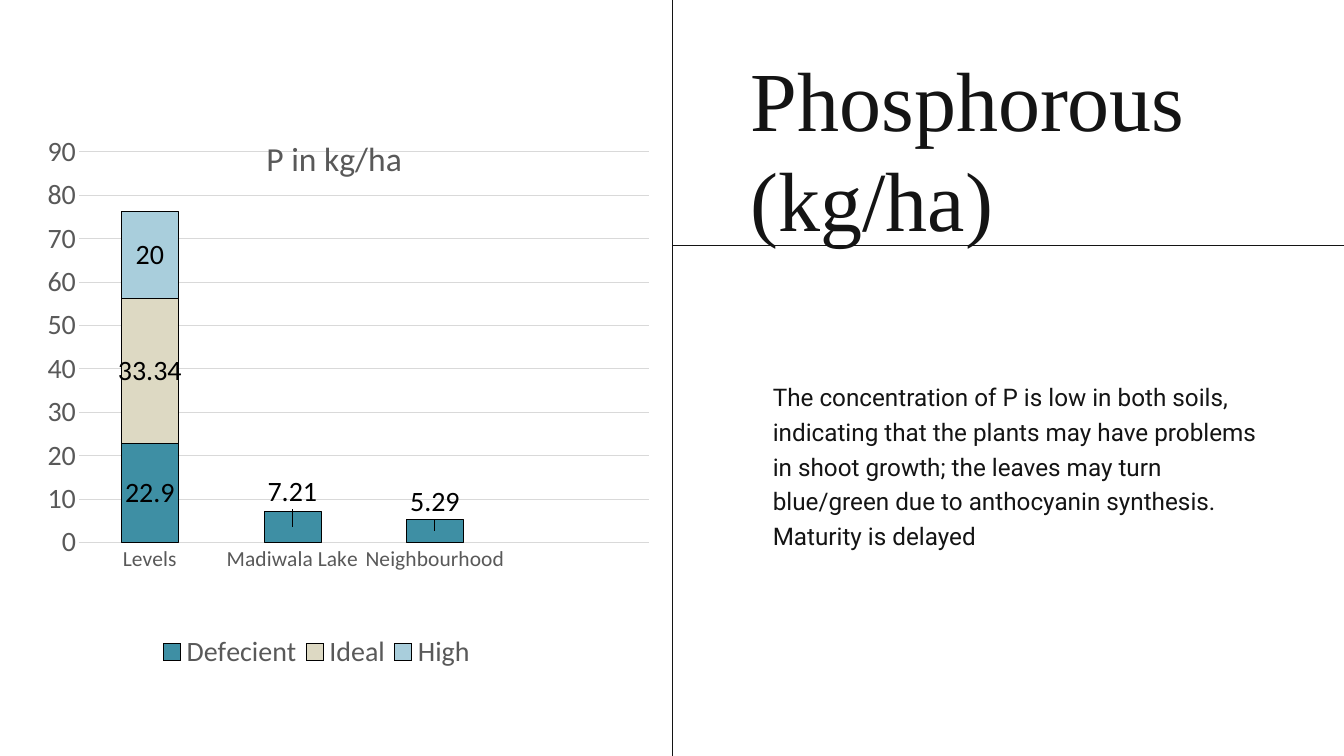
import pptx
import pptx.chart.data
import pptx.dml.color
import pptx.enum.chart
import pptx.enum.text
import pptx.oxml
import pptx.oxml.ns
import pptx.util

Inches = pptx.util.Inches
Pt = pptx.util.Pt
qn = pptx.oxml.ns.qn

COLORS = {
    "ink": "141414",
    "axis_text": "595959",
    "grid": "D9D9D9",
    "black": "000000",
    "deficient": "3E8FA4",
    "ideal": "DDD9C3",
    "high": "A9CEDC",
}
CATEGORIES = ["Levels", "Madiwala Lake", "Neighbourhood", ""]
SERIES = [
    ("Defecient", [22.9, 7.21, 5.29, None], "deficient"),
    ("Ideal", [33.34, None, None, None], "ideal"),
    ("High", [20, None, None, None], "high"),
]
# Upward shift of the labels that sit above short columns
RAISED_LABELS = {1: -0.06, 2: -0.05}


def rgb(name):
    return pptx.dml.color.RGBColor.from_string(COLORS[name])


def format_font(font, size, color, name="Calibri"):
    font.name, font.size, font.bold = name, Pt(size), False
    font.color.rgb = rgb(color)


def format_line(line, color, width=0.75):
    line.color.rgb = rgb(color)
    line.width = Pt(width)


def fill_placeholder(shape, box, lines, *, font, size, spacing):
    """Move a placeholder and set its text, one paragraph a line."""
    shape.left, shape.top, shape.width, shape.height = map(Inches, box)
    frame = shape.text_frame
    frame.margin_left = frame.margin_right = 0
    frame.margin_top = frame.margin_bottom = 0
    frame.word_wrap = True
    frame.auto_size = pptx.enum.text.MSO_AUTO_SIZE.NONE
    frame.vertical_anchor = pptx.enum.text.MSO_ANCHOR.TOP
    frame.text = "\n".join(lines)
    for paragraph in frame.paragraphs:
        properties = paragraph._p.get_or_add_pPr()
        properties.set("marL", "0")
        properties.set("indent", "0")
        pptx.oxml.ns  # namespaces come from the library
        properties.append(properties.makeelement(qn("a:buNone"), {}))
        paragraph.alignment = pptx.enum.text.PP_ALIGN.LEFT
        paragraph.line_spacing = Pt(spacing)
        paragraph.space_before = paragraph.space_after = Pt(0)
        for run in paragraph.runs:
            format_font(run.font, size, "ink", font)


def add_rule(slide, start, end):
    connector = slide.shapes.add_connector(
        pptx.enum.shapes.MSO_CONNECTOR.STRAIGHT, *map(Inches, start + end))
    format_line(connector.line, "ink", 1.5)
    properties = connector.element.spPr
    properties.append(properties.makeelement(qn("a:effectLst"), {}))


def set_layout(parent, index, inner=False, **values):
    """Give a chart part a manual layout in fractions of the chart."""
    old = parent.find(qn("c:layout"))
    if old is not None:
        parent.remove(old)
    layout = parent.makeelement(qn("c:layout"), {})
    manual = layout.makeelement(qn("c:manualLayout"), {})
    layout.append(manual)
    settings = {"layoutTarget": "inner"} if inner else {}
    if "dx" in values:
        settings.update(x=values["dx"], y=values["dy"])
    else:
        settings.update(xMode="edge", yMode="edge", **values)
    for tag, value in settings.items():
        manual.append(manual.makeelement(qn("c:" + tag), {"val": str(value)}))
    parent.insert(index, layout)


def format_series(series, color):
    series.format.fill.solid()
    series.format.fill.fore_color.rgb = rgb(color)
    format_line(series.format.line, "black")
    labels = series.data_labels
    labels.show_value = True
    labels.position = pptx.enum.chart.XL_LABEL_POSITION.CENTER
    format_font(labels.font, 30, "black")


def raise_labels(series):
    for index in RAISED_LABELS:
        label = series.points[index].data_label
        format_font(label.font, 30, "black")
        label.position = pptx.enum.chart.XL_LABEL_POSITION.CENTER
    for label in series.data_labels._element.findall(qn("c:dLbl")):
        index = int(label.find(qn("c:idx")).get("val"))
        set_layout(label, 1, dx=0, dy=RAISED_LABELS[index])


def format_axes(chart):
    for axis, size in ((chart.category_axis, 23), (chart.value_axis, 30)):
        axis.major_tick_mark = pptx.enum.chart.XL_TICK_MARK.NONE
        axis.minor_tick_mark = pptx.enum.chart.XL_TICK_MARK.NONE
        format_font(axis.tick_labels.font, size, "axis_text")
    format_line(chart.category_axis.format.line, "grid")
    value_axis = chart.value_axis
    value_axis.minimum_scale, value_axis.maximum_scale = 0, 90
    value_axis.major_unit = 10
    value_axis.format.line.fill.background()
    value_axis.has_major_gridlines = True
    format_line(value_axis.major_gridlines.format.line, "grid")


def add_phosphorous_chart(slide, box):
    data = pptx.chart.data.CategoryChartData()
    data.categories = CATEGORIES
    for name, values, _ in SERIES:
        data.add_series(name, values)
    chart = slide.shapes.add_chart(
        pptx.enum.chart.XL_CHART_TYPE.COLUMN_STACKED,
        *map(Inches, box), data).chart
    format_font(chart.font, 30, "black")

    # Columns and labels
    plot = chart.plots[0]
    plot.gap_width, plot.overlap = 150, 100
    plot.vary_by_categories = False
    for series, (_, _, color) in zip(plot.series, SERIES):
        format_series(series, color)
    raise_labels(plot.series[0])
    format_axes(chart)
    plot_area = chart.element.find(".//" + qn("c:plotArea"))
    set_layout(plot_area, 0, inner=True, x=0.09, y=0.09, w=0.91, h=0.68)

    # Title
    title = chart.chart_title
    title.text_frame.text = "P in kg/ha"
    format_font(title.text_frame.paragraphs[0].runs[0].font, 36, "axis_text")
    set_layout(title.element, 1, x=0.38, y=0.05)
    title.element.find(qn("c:overlay")).set("val", "1")

    # Legend
    chart.has_legend = True
    legend = chart.legend
    legend.position = pptx.enum.chart.XL_LEGEND_POSITION.BOTTOM
    legend.include_in_layout = False
    format_font(legend.font, 30, "axis_text")
    set_layout(legend._element, 1, x=0.21, y=0.92, w=0.52, h=0.08)


def main():
    presentation = pptx.Presentation()
    presentation.slide_width = Inches(20)
    presentation.slide_height = Inches(11.25)
    slide = presentation.slides.add_slide(presentation.slide_layouts[1])

    # Dividing lines
    add_rule(slide, (10.01, 0), (10.01, 11.25))
    add_rule(slide, (10.01, 3.65), (20, 3.65))

    # Title and comment
    fill_placeholder(
        slide.shapes.title, (11.17, 0.7, 7.7, 3.03),
        ["Phosphorous", "(kg/ha)"],
        font="Times New Roman", size=90, spacing=108)
    fill_placeholder(
        slide.placeholders[1], (11.5, 5.61, 7.55, 2.55),
        ["The concentration of P is low in both soils, indicating that the "
         "plants may have problems in shoot growth; the leaves may turn "
         "blue/green due to anthocyanin synthesis. Maturity is delayed"],
        font="Roboto", size=26, spacing=37.2)

    add_phosphorous_chart(slide, (0.33, 1.49, 9.33, 8.55))
    presentation.save("out.pptx")


if __name__ == "__main__":
    main()
